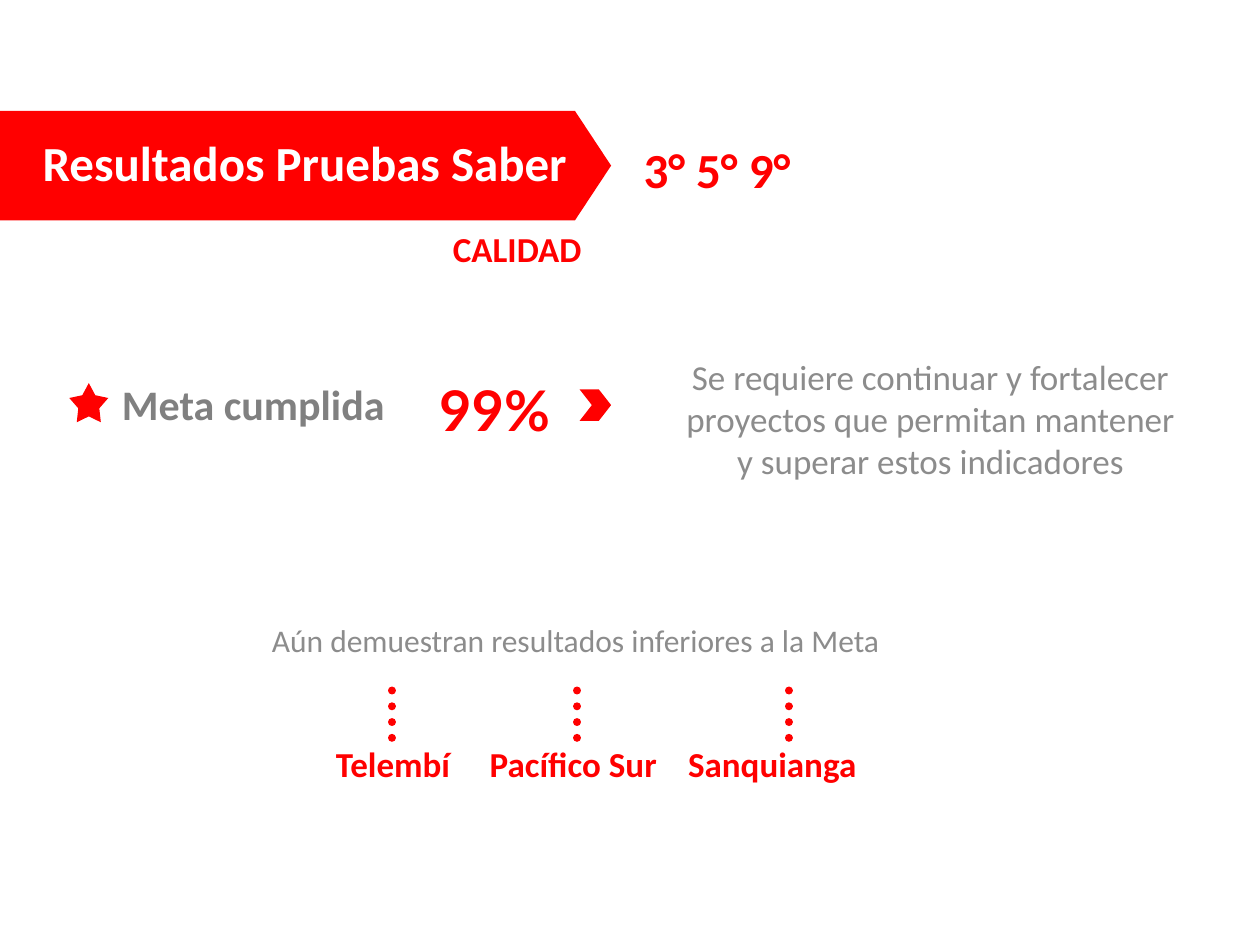
from pptx import Presentation, util as u
from pptx.dml.color import RGBColor
from pptx.enum import dml, shapes, text
from pptx.oxml.ns import qn
from lxml import etree

RED = RGBColor(0xFF, 0x00, 0x00)
WHITE = RGBColor(0xFF, 0xFF, 0xFF)
DARK_GRAY = RGBColor(0x80, 0x80, 0x80)
GRAY = RGBColor(0x8C, 0x8C, 0x8C)

LEFT, CENTER = text.PP_ALIGN.LEFT, text.PP_ALIGN.CENTER
TOP, MIDDLE = text.MSO_ANCHOR.TOP, text.MSO_ANCHOR.MIDDLE
SHAPE = shapes.MSO_SHAPE


class SlideBuilder:
    font = "Calibri"
    accent = RED

    def __init__(self, slide):
        self.s = slide

    def text(self, words, box, size=20, color=None, bold=True, font=None,
             align=LEFT, anchor=TOP, spacing=None, wrap=True):
        tf = self.s.shapes.add_textbox(*map(u.Inches, box)).text_frame
        tf.word_wrap = wrap
        tf.vertical_anchor = anchor
        p = tf.paragraphs[0]
        p.alignment = align
        p.line_spacing = spacing
        r = p.add_run()
        r.text = words
        r.font.name = font or self.font
        r.font.size = u.Pt(size)
        r.font.bold = bold
        r.font.color.rgb = color or self.accent

    def shape(self, kind, box, *adjustments):
        sp = self.s.shapes.add_shape(kind, *map(u.Inches, box))
        sp.shadow.inherit = False
        sp.fill.solid()
        sp.fill.fore_color.rgb = self.accent
        sp.line.fill.background()
        for i, value in enumerate(adjustments):
            sp.adjustments[i] = value

    def dotted_line(self, x, top, bottom):
        """Draw a vertical line of round dots."""
        line = self.s.shapes.add_connector(
            shapes.MSO_CONNECTOR.STRAIGHT,
            *map(u.Inches, (x, top, x, bottom)))
        line.line.color.rgb = self.accent
        line.line.width = u.Pt(4.5)
        line.line.dash_style = dml.MSO_LINE.ROUND_DOT
        props = line._element.spPr
        props.find(qn("a:ln")).set("cap", "rnd")
        etree.SubElement(props, qn("a:effectLst"))


def main():
    prs = Presentation()
    prs.slide_width, prs.slide_height = u.Inches(10), u.Inches(7.5)
    b = SlideBuilder(prs.slides.add_slide(prs.slide_layouts[6]))

    # Heading
    b.shape(SHAPE.PENTAGON, (0, 0.88, 4.85, 0.87), 0.33)
    b.text("Resultados Pruebas Saber", (0.24, 1, 5.24, 0.63), size=28,
           color=WHITE, anchor=MIDDLE, spacing=0.9)
    b.text("3° 5° 9°", (5.01, 1.06, 1.43, 0.57), size=28, wrap=False)
    b.text("CALIDAD", (3.34, 1.75, 1.53, 0.49), align=CENTER,
           anchor=MIDDLE, spacing=0.9)

    # Goal reached
    b.shape(SHAPE.STAR_5_POINT, (0.55, 3.04, 0.31, 0.31), 0.27, 1.05, 1.11)
    b.text("Meta cumplida", (0.87, 3, 2.43, 0.5), size=24,
           color=DARK_GRAY, spacing=0.9)
    b.text("99%", (3.37, 2.93, 1.11, 0.64), size=32, font="Lato",
           align=CENTER, wrap=False)
    b.shape(SHAPE.CHEVRON, (4.6, 3.09, 0.25, 0.25), 0.39)
    b.text("Se requiere continuar y fortalecer proyectos que permitan "
           "mantener y superar estos indicadores", (5.28, 2.77, 4.21, 1.46),
           color=GRAY, bold=False, align=CENTER)

    # Regions below the goal
    b.text("Aún demuestran resultados inferiores a la Meta",
           (1.58, 4.88, 5.98, 0.52), size=18, color=GRAY, bold=False,
           align=CENTER)
    width = 1.8
    for region, center, line_x in (("Telembí", 3.12, 3.11),
                                   ("Pacífico Sur", 4.55, 4.58),
                                   ("Sanquianga", 6.13, 6.26)):
        b.dotted_line(line_x, 5.48, 5.87)
        b.text(region, (center - width / 2, 5.84, width, 0.52), align=CENTER)

    prs.save("out.pptx")


if __name__ == "__main__":
    main()
